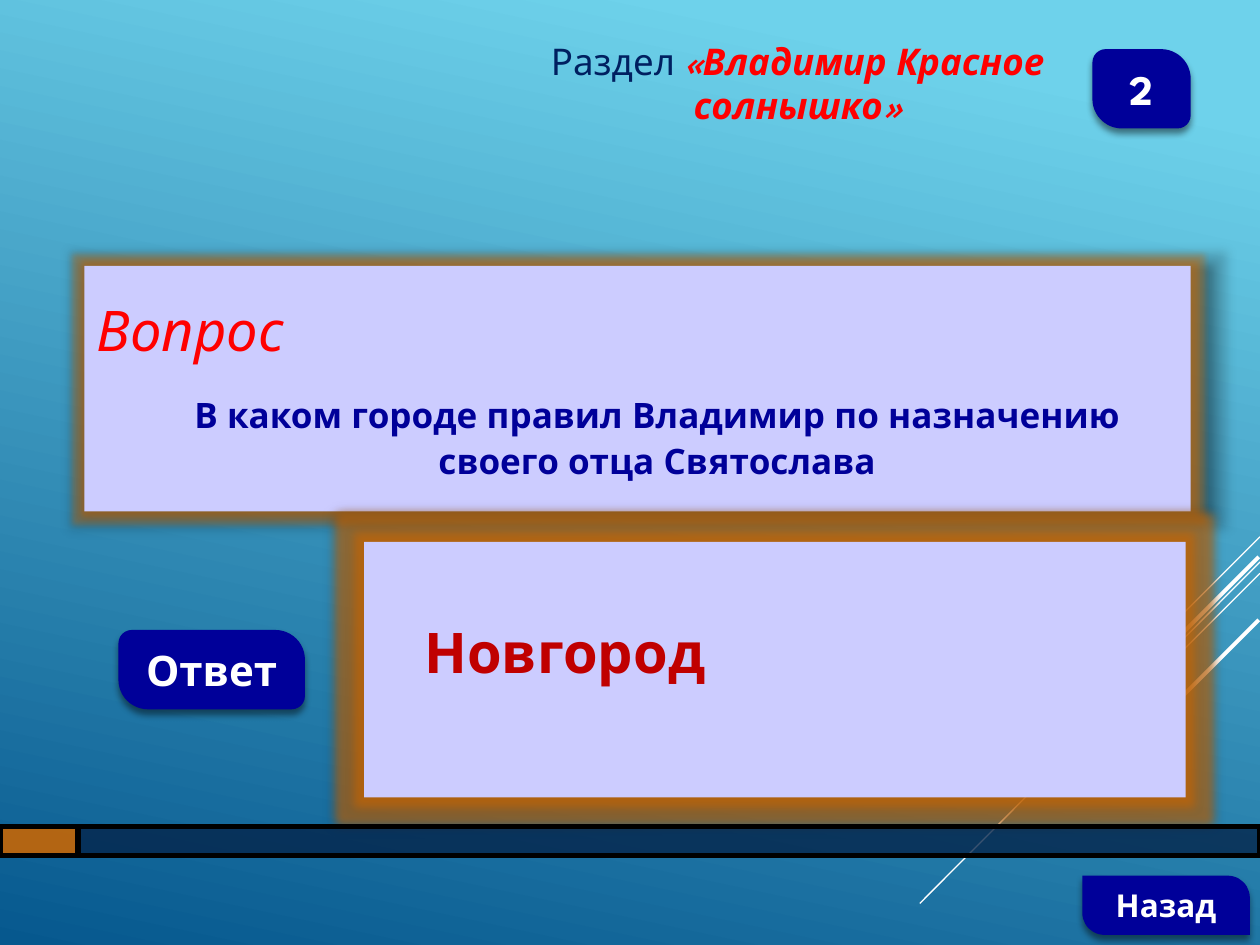
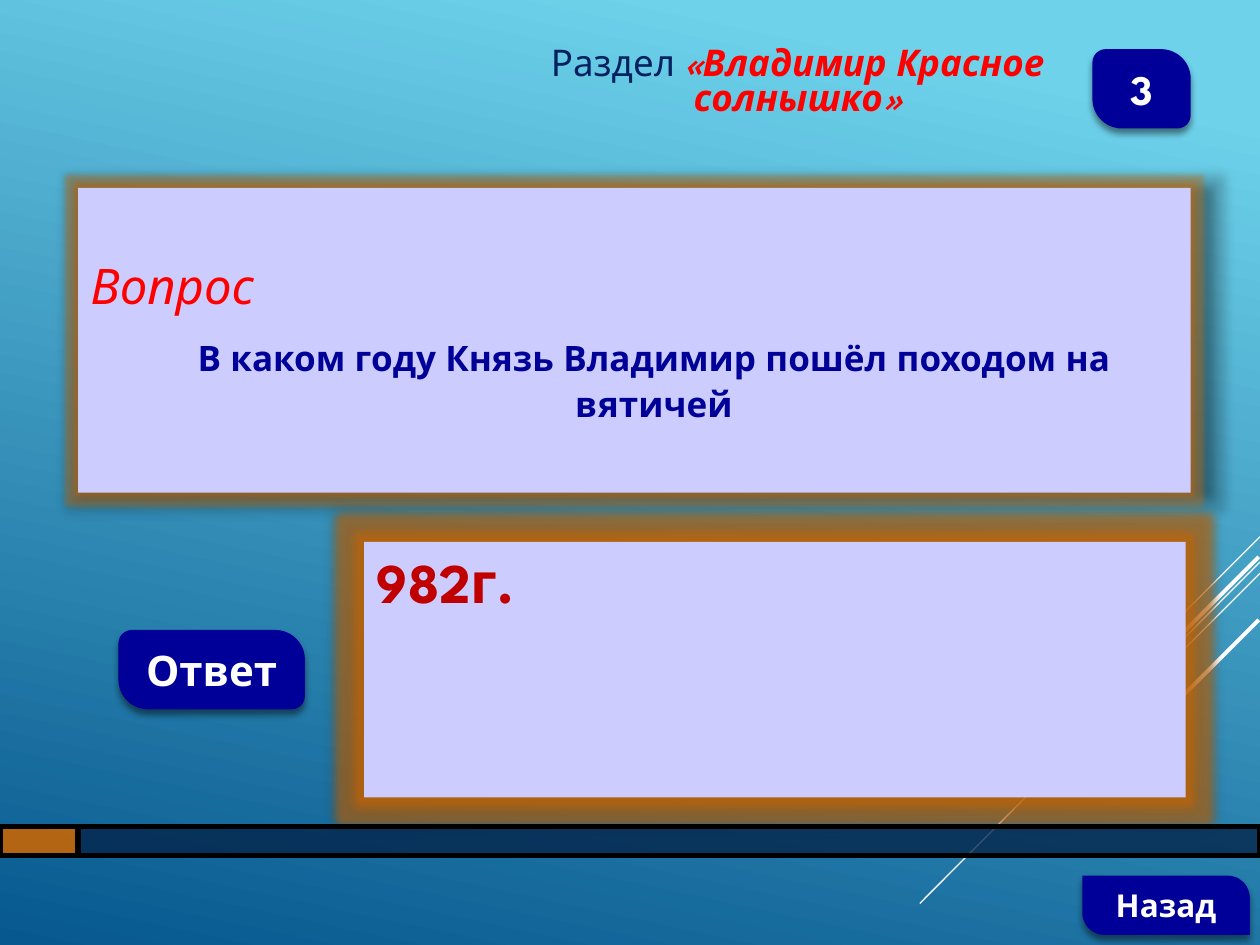
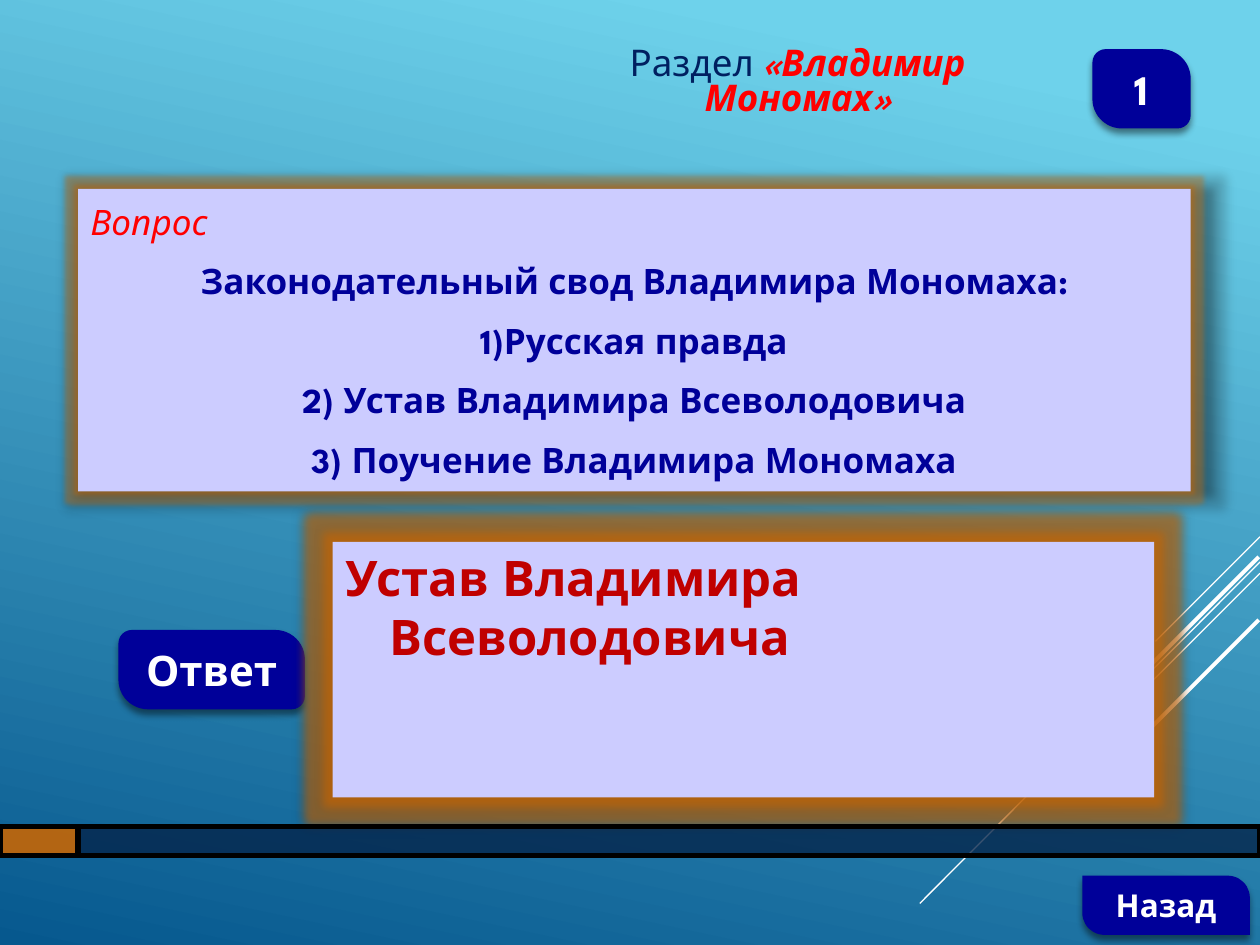
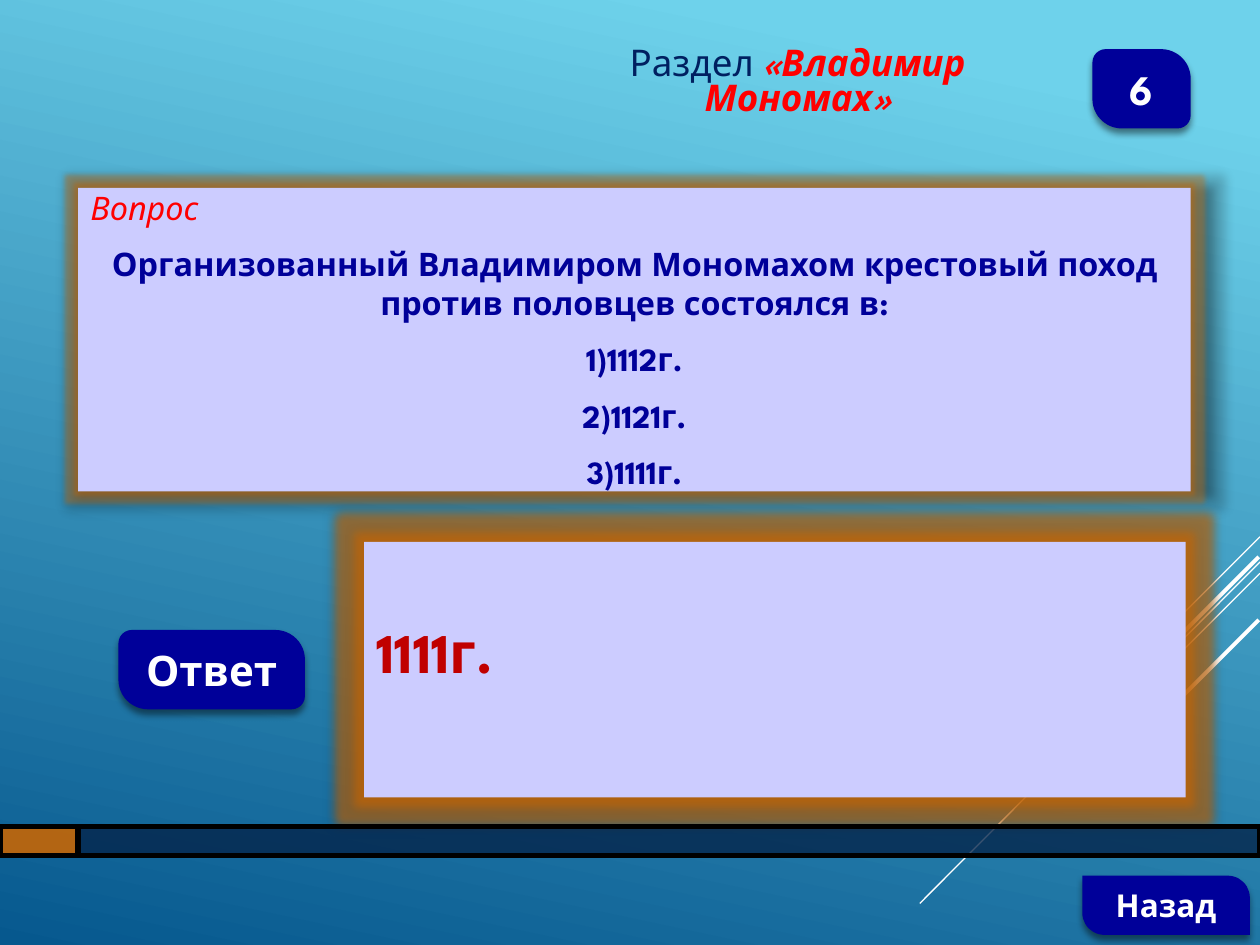
from lxml.etree import SubElement
from pptx import Presentation
from pptx.dml.color import RGBColor
from pptx.enum.shapes import MSO_CONNECTOR, MSO_SHAPE
from pptx.enum.text import MSO_ANCHOR, PP_ALIGN
from pptx.oxml.ns import qn
from pptx.util import Pt

PX = 9144  # 100 px to the inch
SLIDE_W, SLIDE_H = 1000, 750

# ---- Content ----
RED_SUN = "«Владимир Красное солнышко»"
MONOMAKH = "«Владимир Мономах»"
QUESTION_LABEL, ANSWER_LABEL, BACK_LABEL, SECTION_LABEL = "Вопрос", "Ответ", "Назад", "Раздел "

# label_size / size: type sizes of the question; gap: space between its paragraphs
CARDS = [
    dict(number="2", section=RED_SUN, title_spacing=1.0,
         question=["В каком городе правил Владимир по назначению своего отца Святослава"],
         question_box=(67, 211, 878, 195), label_size=32, size=20, gap=15,
         body_indent=31, body_spacing=1.1,
         answer="Новгород", answer_left=289, answer_size=32, answer_top=60, answer_indent=(38, 0)),
    dict(number="3", section=RED_SUN, title_spacing=0.8,
         question=["В каком году Князь Владимир пошёл походом на вятичей"],
         question_box=(62, 149, 883, 242), label_size=28, size=20, gap=10,
         body_indent=31, body_spacing=1.1,
         answer="982г.", answer_left=289, answer_size=32, answer_top=5, answer_indent=(35, -35)),
    dict(number="1", section=MONOMAKH, title_spacing=0.8,
         question=["Законодательный свод Владимира Мономаха:", "1)Русская правда",
                   "2) Устав Владимира Всеволодовича", "3) Поучение Владимира Мономаха"],
         question_box=(62, 150, 883, 240), label_size=20, size=20, gap=10,
         body_indent=0, body_spacing=1.0,
         answer="Устав Владимира Всеволодовича", answer_left=264, answer_size=28,
         answer_top=5, answer_indent=(35, -35)),
    dict(number="6", section=MONOMAKH, title_spacing=0.8,
         question=["Организованный Владимиром Мономахом крестовый поход против половцев состоялся в:",
                   "1)1112г.", "2)1121г.", "3)1111г."],
         question_box=(62, 149, 883, 241), label_size=18.5, size=18.5, gap=10,
         body_indent=0, body_spacing=1.0,
         answer="1111г.", answer_left=289, answer_size=32, answer_top=60, answer_indent=(0, 0)),
]

# ---- Shared look ----
THEME = dict(
    font="League Spartan",
    sky="6ED2EB", sea="06588E", white="FFFFFF", black="000000",
    panel="CCCCFF", button="000099", glow="CC6600", band="042349",
    label="FF0000", question="000099", section="002060", answer="C00000",
    title_size=21, button_size=24, back_size=18, band_line=3,
)
STREAKS = [  # from, to, line width in points
    ((1000, 426), (917, 509), 0.75),
    ((1000, 446), (730, 717), 0.75),
    ((1000, 455), (828, 627), 0.75),
    ((999, 442), (842, 599), 2.25),
    ((999, 492), (885, 606), 2.25),
]
BAND_TOP, BAND_H, BAND_SPLIT = 656, 23, 62
BANDS = [(0, BAND_SPLIT, "glow", 87), (BAND_SPLIT, SLIDE_W - BAND_SPLIT, "band", 78)]
TITLE_BOX = (422, 31, 422, 70)
ANSWER_TOP, ANSWER_W, ANSWER_H = 430, 652, 203
ANSWER_BUTTON = (94, 500, 148, 63)
NUMBER_BUTTON = (867, 39, 78, 63)
BACK_BUTTON = (859, 695, 133, 47)


def rgb(role):
    return RGBColor.from_string(THEME[role])


def emu(*lengths):
    return [length * PX for length in lengths]


def set_attributes(target, values):
    for attribute, value in values.items():
        setattr(target, attribute, value)


def add_color(parent, role, alpha):
    color = SubElement(parent, qn("a:srgbClr"), val=THEME[role])
    SubElement(color, qn("a:alpha"), val=str(alpha * 1000))


def add_effects(shape, glow=None, **shadow):
    """Add a glow (points, alpha) and an outer shadow (alpha plus XML attributes)."""
    shape.shadow.inherit = False
    effects = shape._element.spPr.find(qn("a:effectLst"))
    if glow:
        radius, alpha = glow
        add_color(SubElement(effects, qn("a:glow"), rad=str(Pt(radius))), "glow", alpha)
    alpha = shadow.pop("alpha")
    attributes = {key: str(value) for key, value in shadow.items()}
    add_color(SubElement(effects, qn("a:outerShdw"), rotWithShape="0", **attributes), "black", alpha)


def add_panel(slide, kind, box, fill):
    panel = slide.shapes.add_shape(kind, *emu(*box))
    panel.shadow.inherit = False
    panel.fill.solid()
    panel.fill.fore_color.rgb = rgb(fill)
    panel.line.fill.background()
    panel.text_frame.word_wrap = True
    return panel


def write(paragraph, text, role, size, **style):
    run = paragraph.add_run()
    run.text = text
    run.font.color.rgb = rgb(role)
    set_attributes(run.font, dict(name=THEME["font"], size=Pt(size), **style))


def indent(paragraph, left, first):
    properties = paragraph._p.get_or_add_pPr()
    properties.set("marL", str(left * PX))
    properties.set("indent", str(first * PX))


def add_button(slide, box, text, size, top_left=0.167):
    button = add_panel(slide, MSO_SHAPE.ROUND_2_DIAG_RECTANGLE, box, "button")
    button.adjustments[0], button.adjustments[1] = top_left, 0.373
    add_effects(button, alpha=46, blurRad=Pt(4), dist=Pt(3), dir=90 * 60000)
    button.text_frame.vertical_anchor = MSO_ANCHOR.MIDDLE
    paragraph = button.text_frame.paragraphs[0]
    paragraph.alignment = PP_ALIGN.CENTER
    write(paragraph, text, "white", size, bold=True)


def add_streaks(slide):
    for start, end, width in STREAKS:
        streak = slide.shapes.add_connector(MSO_CONNECTOR.STRAIGHT, *emu(*start, *end))
        streak.line.color.rgb = rgb("white")
        streak.line.width = Pt(width)
        SubElement(streak._element.spPr, qn("a:effectLst"))


def add_question(slide, card):
    panel = add_panel(slide, MSO_SHAPE.RECTANGLE, card["question_box"], "panel")
    add_effects(panel, glow=(5, 40), alpha=40, blurRad=Pt(5), sx=102000, sy=102000, algn="tl")
    frame = panel.text_frame
    frame.vertical_anchor = MSO_ANCHOR.MIDDLE
    label = frame.paragraphs[0]
    label.alignment = PP_ALIGN.LEFT
    indent(label, 31, -31)
    write(label, QUESTION_LABEL, "label", card["label_size"], italic=True)
    for line in card["question"]:
        paragraph = frame.add_paragraph()
        set_attributes(paragraph, dict(alignment=PP_ALIGN.CENTER, space_before=Pt(card["gap"]),
                                       line_spacing=card["body_spacing"]))
        indent(paragraph, card["body_indent"], 0)
        write(paragraph, line, "question", card["size"], bold=True)


def add_title(slide, card):
    frame = slide.shapes.add_textbox(*emu(*TITLE_BOX)).text_frame
    set_attributes(frame, dict(word_wrap=True, vertical_anchor=MSO_ANCHOR.MIDDLE))
    paragraph = frame.paragraphs[0]
    set_attributes(paragraph, dict(alignment=PP_ALIGN.CENTER, line_spacing=card["title_spacing"]))
    write(paragraph, SECTION_LABEL, "section", THEME["title_size"])
    write(paragraph, card["section"], "label", THEME["title_size"], bold=True, italic=True)


def add_answer(slide, card):
    box = (card["answer_left"], ANSWER_TOP, ANSWER_W, ANSWER_H)
    panel = add_panel(slide, MSO_SHAPE.RECTANGLE, box, "panel")
    add_effects(panel, glow=(11, 60), alpha=40, blurRad=Pt(5))
    set_attributes(panel.text_frame, dict(vertical_anchor=MSO_ANCHOR.TOP,
                                          margin_top=card["answer_top"] * PX))
    paragraph = panel.text_frame.paragraphs[0]
    paragraph.alignment = PP_ALIGN.LEFT
    indent(paragraph, *card["answer_indent"])
    write(paragraph, card["answer"], "answer", card["answer_size"], bold=True)


def add_bands(slide):
    for left, width, role, alpha in BANDS:
        band = add_panel(slide, MSO_SHAPE.RECTANGLE, (left, BAND_TOP, width, BAND_H), role)
        color = band._element.spPr.find(qn("a:solidFill"))[0]
        SubElement(color, qn("a:alpha"), val=str(alpha * 1000))
        band.line.color.rgb = rgb("black")
        band.line.width = Pt(THEME["band_line"])


def set_background(master):
    fill = master.background.fill
    fill.gradient()
    fill.gradient_angle = 258
    for stop, role, position in zip(fill.gradient_stops, ("sky", "sea"), (0.1, 1.0)):
        stop.color.rgb = rgb(role)
        stop.position = position


def main():
    deck = Presentation()
    deck.slide_width, deck.slide_height = emu(SLIDE_W, SLIDE_H)
    set_background(deck.slide_master)
    for card in CARDS:
        slide = deck.slides.add_slide(deck.slide_layouts[6])
        add_streaks(slide)
        add_question(slide, card)
        add_button(slide, ANSWER_BUTTON, ANSWER_LABEL, THEME["button_size"])
        add_title(slide, card)
        add_answer(slide, card)
        add_button(slide, BACK_BUTTON, BACK_LABEL, THEME["back_size"], top_left=0.004)
        add_button(slide, NUMBER_BUTTON, card["number"], THEME["button_size"])
        add_bands(slide)
    deck.save("out.pptx")


if __name__ == "__main__":
    main()
